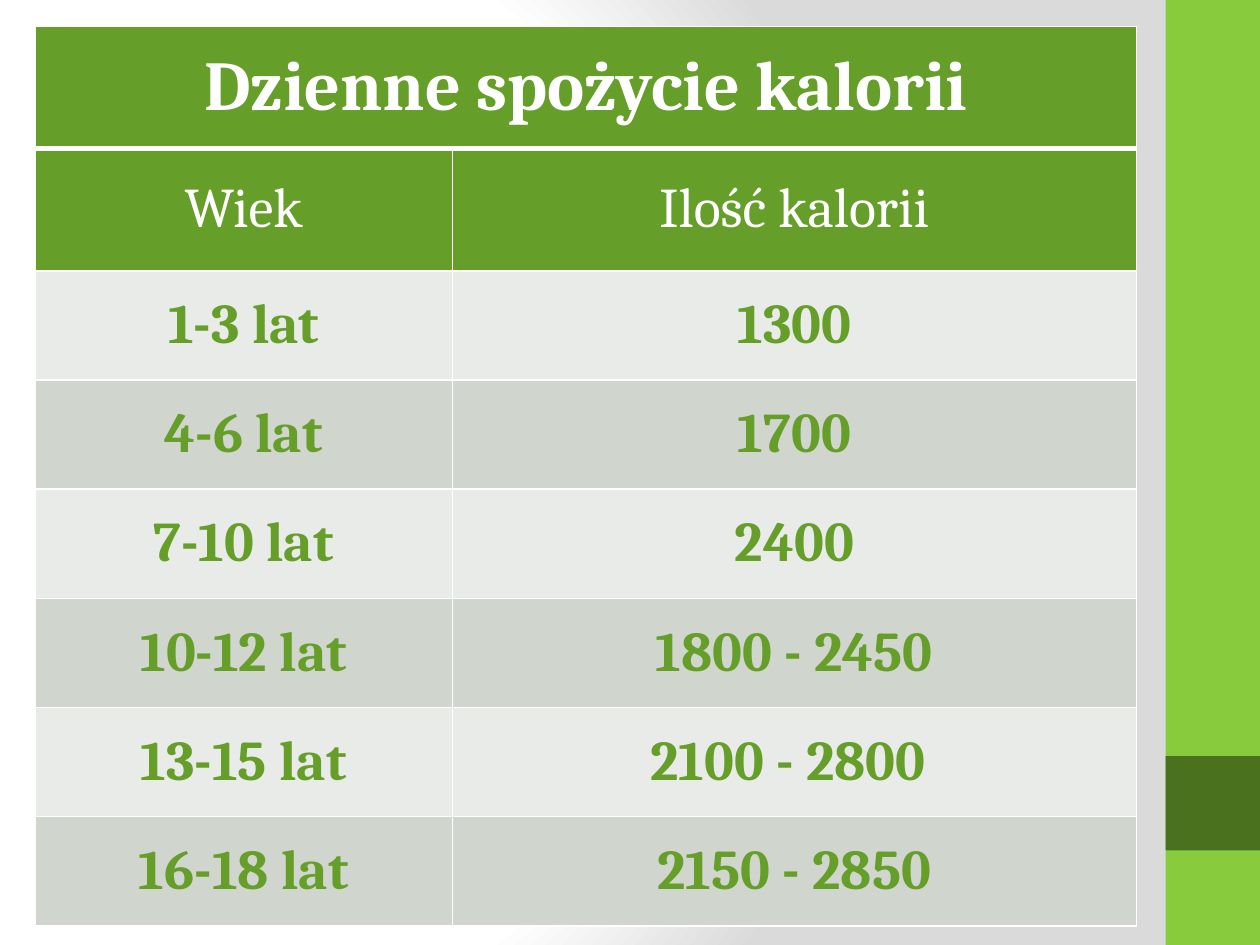
from pptx import Presentation
from pptx.dml.color import RGBColor
from pptx.enum.shapes import MSO_SHAPE as Shape
from pptx.enum.text import MSO_ANCHOR as Anchor, PP_ALIGN as Align
from pptx.oxml import parse_xml
from pptx.oxml.ns import nsdecls, qn
from pptx.util import Inches, Pt

WHITE = RGBColor(0xFF, 0xFF, 0xFF)
SHADE = RGBColor(0xDA, 0xDA, 0xDA)
LIME = RGBColor(0x88, 0xCC, 0x3E)
DARK_GREEN = RGBColor(0x49, 0x71, 0x1E)
GREEN = RGBColor(0x66, 0x9E, 0x2A)
BANDS = (RGBColor(0xE9, 0xEB, 0xE8), RGBColor(0xD0, 0xD5, 0xCD))
FONT = "Cambria"

TITLE = "Dzienne spożycie kalorii"
HEADINGS = ("Wiek", "Ilość kalorii")
CALORIES = (
    ("1-3 lat", "1300"),
    ("4-6 lat", "1700"),
    ("7-10 lat", "2400"),
    ("10-12 lat", "1800 - 2450"),
    ("13-15 lat", "2100 - 2800 "),
    ("16-18 lat", "2150 - 2850"),
)


def set_background(slide):
    """Radial gradient from white to light grey."""
    slide.background.fill.gradient()
    gradient = slide.element.find(".//" + qn("a:gradFill"))
    stops = "".join(
        f'<a:gs pos="{position * 1000}"><a:srgbClr val="{color}"/></a:gs>'
        for position, color in ((0, WHITE), (75, WHITE), (100, SHADE))
    )
    gradient.getparent().replace(gradient, parse_xml(
        f'<a:gradFill {nsdecls("a")} rotWithShape="1"><a:gsLst>{stops}</a:gsLst>'
        '<a:path path="circle">'
        '<a:fillToRect l="20000" t="50000" r="100000" b="50000"/>'
        '</a:path></a:gradFill>'
    ))


def add_side_band(slide, left, top, width, height):
    """Lime strip with a dark square near its foot."""
    for y, part_height, color in ((top, height, LIME),
                                  (top + height - 2 * width, width, DARK_GREEN)):
        shape = slide.shapes.add_shape(Shape.RECTANGLE, left, y, width, part_height)
        shape.shadow.inherit = False
        shape.fill.solid()
        shape.fill.fore_color.rgb = color
        shape.line.fill.background()


def set_borders(cell, top=1, bottom=1):
    properties = cell._tc.get_or_add_tcPr()
    widths = (("L", 1), ("R", 1), ("T", top), ("B", bottom))
    for index, (side, width) in enumerate(widths):
        properties.insert(index, parse_xml(
            f'<a:ln{side} {nsdecls("a")} w="{Pt(width)}"><a:solidFill>'
            f'<a:srgbClr val="{WHITE}"/></a:solidFill></a:ln{side}>'
        ))


def fill_cell(cell, text, fill, color, size=32, bold=True):
    cell.fill.solid()
    cell.fill.fore_color.rgb = fill
    cell.vertical_anchor = Anchor.MIDDLE
    paragraph = cell.text_frame.paragraphs[0]
    paragraph.alignment = Align.CENTER
    run = paragraph.add_run()
    run.text = text
    run.font.name = FONT
    run.font.size = Pt(size)
    run.font.bold = bold
    run.font.color.rgb = color


def add_calorie_table(slide, left, top, width, height):
    row_count = len(CALORIES) + 2
    table = slide.shapes.add_table(row_count, 2, left, top, width, height).table

    # Column widths and row heights
    age_width, head_height = Inches(3.31), Inches(0.97)
    table.columns[0].width = age_width
    table.columns[1].width = width - age_width
    body_height = (height - 2 * head_height) // len(CALORIES)
    for index, row in enumerate(table.rows):
        row.height = head_height if index < 2 else body_height

    # Title across both columns
    table.cell(0, 0).merge(table.cell(0, 1))
    fill_cell(table.cell(0, 0), TITLE, GREEN, WHITE, size=40)

    # Headings and banded body
    for column, heading in enumerate(HEADINGS):
        fill_cell(table.cell(1, column), heading, GREEN, WHITE, bold=False)
    for index, values in enumerate(CALORIES):
        for column, value in enumerate(values):
            fill_cell(table.cell(index + 2, column), value, BANDS[index % 2], GREEN)

    # White grid, heavier below the title
    for index in range(row_count):
        for column in range(2):
            set_borders(table.cell(index, column),
                        top=3 if index == 1 else 1,
                        bottom=3 if index == 0 else 1)


def main():
    presentation = Presentation()
    presentation.slide_width = Inches(10)
    presentation.slide_height = Inches(7.5)
    slide = presentation.slides.add_slide(presentation.slide_layouts[6])
    set_background(slide)
    add_side_band(slide, Inches(9.25), 0, Inches(0.75), Inches(7.5))
    add_calorie_table(slide, Inches(0.28), Inches(0.21), Inches(8.74), Inches(7.14))
    presentation.save("out.pptx")


if __name__ == "__main__":
    main()
